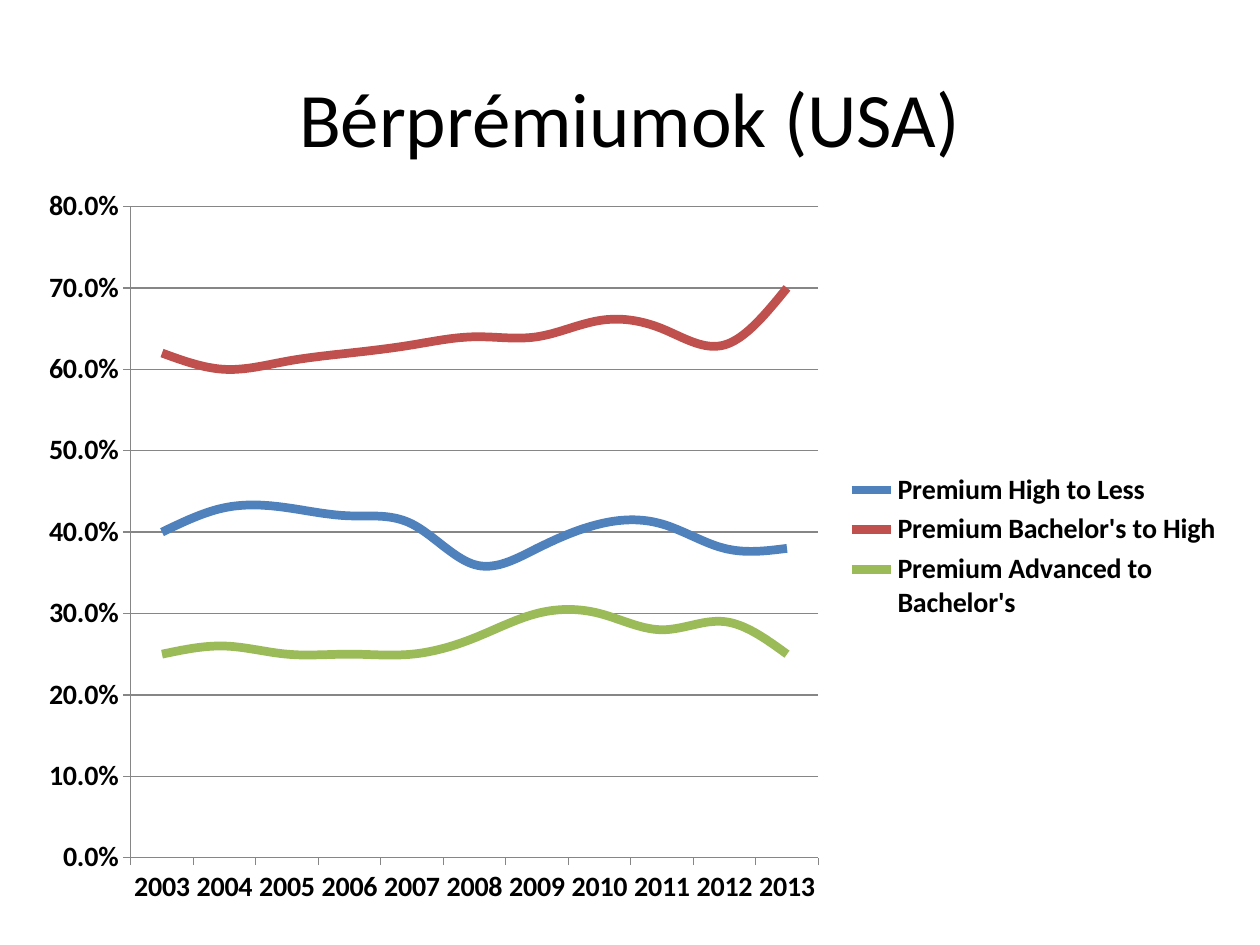
import pptx
import pptx.chart.data
import pptx.dml.color
import pptx.enum.chart
import pptx.enum.text
import pptx.util
from pptx.util import Cm

COLORS = {"text": "000000", "axis": "868686", "high": "4F81BD",
          "bachelor": "C0504D", "advanced": "9BBB59"}
FONT = "Calibri"
YEARS = [str(year) for year in range(2003, 2014)]
PREMIUMS = [
    ("Premium High to Less", "high",
     [0.4, 0.43, 0.43, 0.42, 0.41, 0.36, 0.38, 0.41, 0.41, 0.38, 0.38]),
    ("Premium Bachelor's to High", "bachelor",
     [0.62, 0.6, 0.61, 0.62, 0.63, 0.64, 0.64, 0.66, 0.65, 0.63, 0.7]),
    ("Premium Advanced to Bachelor's", "advanced",
     [0.25, 0.26, 0.25, 0.25, 0.25, 0.27, 0.3, 0.3, 0.28, 0.29, 0.25]),
]


def rgb(name):
    """Return the named colour."""
    return pptx.dml.color.RGBColor.from_string(COLORS[name])


def set_all(obj, values):
    """Set attributes of an object from a dict."""
    for name, value in values.items():
        setattr(obj, name, value)


def style_font(font, size, bold):
    """Apply the slide's typeface and text colour."""
    set_all(font, {"name": FONT, "size": pptx.util.Pt(size), "bold": bold})
    font.color.rgb = rgb("text")


def style_line(line, color, width):
    """Give a line its colour and width in points."""
    line.color.rgb = rgb(color)
    line.width = pptx.util.Pt(width)


def add_title(s, box, text):
    """Place the centred title in the box."""
    tf = s.shapes.add_textbox(*box).text_frame
    set_all(tf, {"word_wrap": True,
                 "vertical_anchor": pptx.enum.text.MSO_ANCHOR.MIDDLE})
    p = tf.paragraphs[0]
    p.alignment = pptx.enum.text.PP_ALIGN.CENTER
    r = p.add_run()
    r.text = text
    style_font(r.font, 44, False)


def add_premium_chart(s, box):
    """Place the smoothed line chart of wage premiums in the box."""
    data = pptx.chart.data.CategoryChartData(number_format="0.0%")
    data.categories = YEARS
    for name, _, values in PREMIUMS:
        data.add_series(name, values)
    chart = s.shapes.add_chart(
        pptx.enum.chart.XL_CHART_TYPE.LINE, *box, data).chart
    set_all(chart, {"has_title": False, "has_legend": True})
    style_font(chart.font, 16, True)
    set_all(chart.legend, {
        "position": pptx.enum.chart.XL_LEGEND_POSITION.RIGHT,
        "include_in_layout": False})
    chart.plots[0].vary_by_categories = False

    for axis in (chart.category_axis, chart.value_axis):
        axis.major_tick_mark = pptx.enum.chart.XL_TICK_MARK.OUTSIDE
        style_line(axis.format.line, "axis", 0.75)
    axis = chart.value_axis
    set_all(axis, {"minimum_scale": 0, "maximum_scale": 0.8,
                   "major_unit": 0.1, "has_major_gridlines": True})
    style_line(axis.major_gridlines.format.line, "axis", 0.75)
    set_all(axis.tick_labels, {"number_format": "0.0%",
                               "number_format_is_linked": False})

    for series, (_, color, _) in zip(chart.plots[0].series, PREMIUMS):
        series.smooth = True
        series.marker.style = pptx.enum.chart.XL_MARKER_STYLE.NONE
        style_line(series.format.line, color, 5)


def main():
    """Build and save the wage premium slide."""
    prs = pptx.Presentation()
    set_all(prs, {"slide_width": Cm(25.4), "slide_height": Cm(19.05)})
    s = prs.slides.add_slide(prs.slide_layouts[6])
    add_title(s, (Cm(1.27), Cm(0.76), Cm(22.86), Cm(3.18)),
              "Bérprémiumok (USA)")
    add_premium_chart(s, (Cm(0.5), Cm(3.52), Cm(24.4), Cm(15.01)))
    prs.save("out.pptx")


if __name__ == "__main__":
    main()
